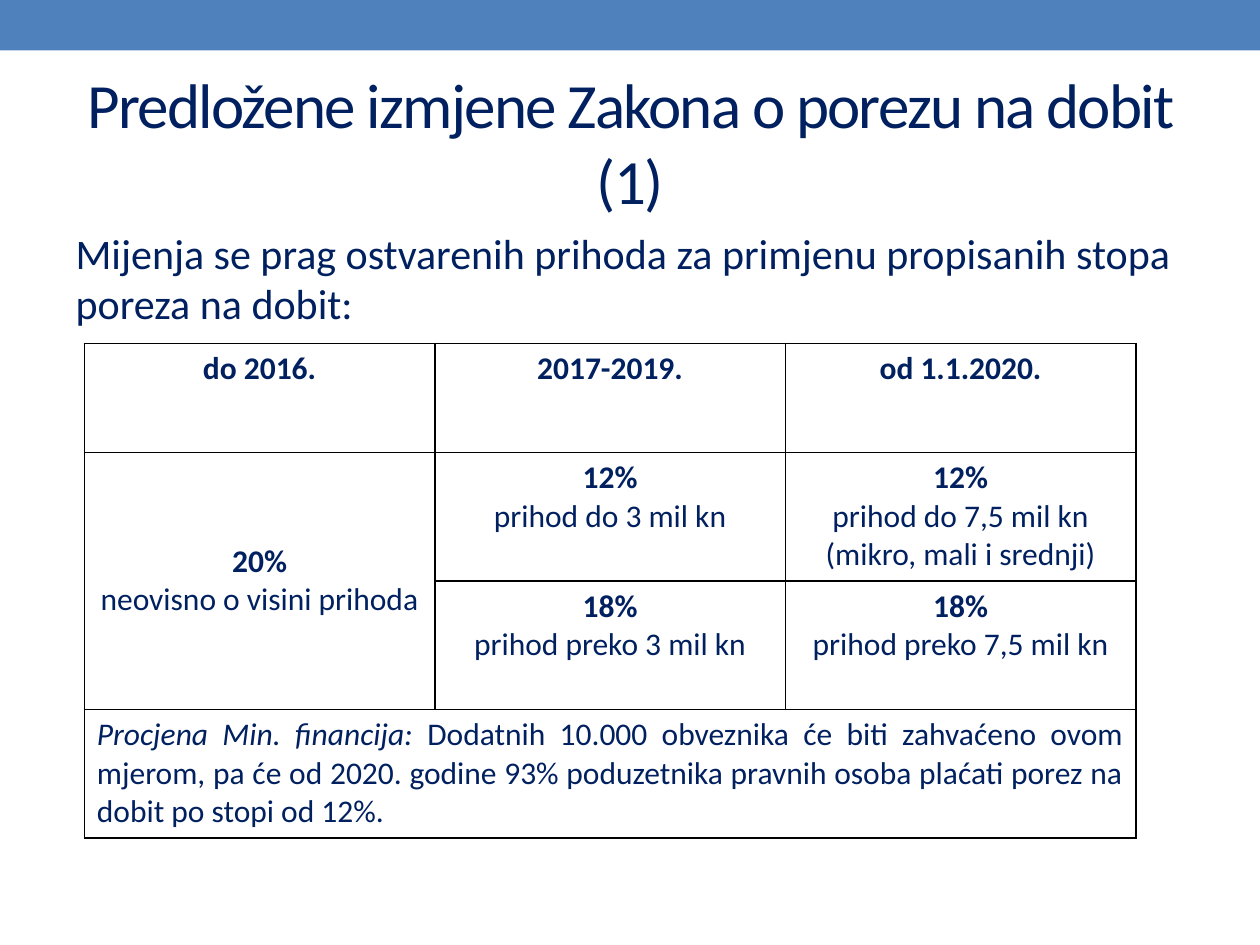
from pptx import Presentation
from pptx.dml.color import RGBColor
from pptx.enum.shapes import MSO_SHAPE
from pptx.enum.text import MSO_ANCHOR, MSO_AUTO_SIZE, PP_ALIGN
from pptx.oxml.ns import qn
from pptx.util import Cm, Pt
from lxml import etree

RECTANGLE = MSO_SHAPE.RECTANGLE
CENTER, LEFT, JUSTIFY = PP_ALIGN.CENTER, PP_ALIGN.LEFT, PP_ALIGN.JUSTIFY
TOP, MIDDLE = MSO_ANCHOR.TOP, MSO_ANCHOR.MIDDLE
FIXED_SIZE = MSO_AUTO_SIZE.NONE
COLORS = {"bar": "4F81BD", "text": "002060", "border": "000000"}
FONT = "Calibri"
TABLE_SIZE = 18
ROW_HEIGHTS = (2.2, 2.59, 2.59, 2.59)
HEADINGS = ("do 2016.", "2017-2019.", "od 1.1.2020.")
RATES = {
    (1, 0): ("20%", "neovisno o visini prihoda"),
    (1, 1): ("12%", "prihod do 3 mil kn"),
    (1, 2): ("12%", "prihod do 7,5 mil kn", "(mikro, mali i srednji)"),
    (2, 1): ("18%", "prihod preko 3 mil kn"),
    (2, 2): ("18%", "prihod preko 7,5 mil kn"),
}
ESTIMATE = (
    "Procjena Min. financija: ",
    "Dodatnih 10.000 obveznika će biti zahvaćeno ovom mjerom, pa će od 2020. "
    "godine 93% poduzetnika pravnih osoba plaćati porez na dobit po stopi od 12%.",
)


def add_span(para, text, size, bold=False, italic=False):
    """Add one formatted run to a paragraph and return it."""
    span = para.add_run()
    span.text = text
    span.font.name = FONT
    span.font.size = Pt(size)
    span.font.bold = bold
    span.font.italic = italic
    span.font.color.rgb = RGBColor.from_string(COLORS["text"])
    return span


def place(shape, left, top, width, height):
    """Move a shape to a box given in centimetres."""
    shape.left, shape.top = Cm(left), Cm(top)
    shape.width, shape.height = Cm(width), Cm(height)


def add_bar(page, left, top, width, height):
    """Draw the coloured band behind the other parts of the page."""
    bar = page.shapes.add_shape(RECTANGLE, Cm(left), Cm(top), Cm(width), Cm(height))
    bar.shadow.inherit = False
    bar.fill.solid()
    bar.fill.fore_color.rgb = RGBColor.from_string(COLORS["bar"])
    bar.line.fill.background()
    bar._element.getparent().insert(2, bar._element)


def fill_title(title, left, top, width, height):
    """Place the title and tighten its letter spacing."""
    place(title, left, top, width, height)
    frame = title.text_frame
    frame.auto_size = FIXED_SIZE
    frame.vertical_anchor = MIDDLE
    para = frame.paragraphs[0]
    para.alignment = CENTER
    span = add_span(para, "Predložene izmjene Zakona o porezu na dobit (1)", 36)
    span.font._element.set("spc", "-100")


def fill_body(body, left, top, width, height):
    """Place the introductory sentence without a bullet."""
    place(body, left, top, width, height)
    frame = body.text_frame
    frame.auto_size = FIXED_SIZE
    frame.vertical_anchor = TOP
    para = frame.paragraphs[0]
    properties = para._p.get_or_add_pPr()
    properties.set("marL", "0")
    properties.set("indent", "0")
    etree.SubElement(properties, qn("a:buNone"))
    para.alignment = LEFT
    para.space_before = Pt(0)
    add_span(para, "Mijenja se prag ostvarenih prihoda za primjenu "
                   "propisanih stopa poreza na dobit:", 24)


def style_cell(cell):
    """Clear a cell's fill and give it thin borders on all sides."""
    properties = cell._tc.get_or_add_tcPr()
    for side in ("a:lnL", "a:lnR", "a:lnT", "a:lnB"):
        line = etree.SubElement(properties, qn(side), w=str(Pt(1)))
        fill = etree.SubElement(line, qn("a:solidFill"))
        etree.SubElement(fill, qn("a:srgbClr"), val=COLORS["border"])
    cell.fill.background()


def fill_cell(cell, lines):
    """Write centred lines into a cell, the first one in bold."""
    for index, text in enumerate(lines):
        para = cell.text_frame.add_paragraph() if index else cell.text_frame.paragraphs[0]
        para.alignment = CENTER
        add_span(para, text, TABLE_SIZE, bold=index == 0)


def add_rate_table(page, left, top, width):
    """Build the table of tax rates by period with the estimate below."""
    frame = page.shapes.add_table(len(ROW_HEIGHTS), len(HEADINGS), Cm(left), Cm(top),
                                  Cm(width), Cm(sum(ROW_HEIGHTS)))
    table = frame.table
    table.first_row = table.horz_banding = False
    for column in table.columns:
        column.width = Cm(width / len(HEADINGS))
    for row, height in zip(table.rows, ROW_HEIGHTS):
        row.height = Cm(height)
        for cell in row.cells:
            style_cell(cell)

    rate, estimate = table.cell(1, 0), table.cell(3, 0)
    rate.merge(table.cell(2, 0))
    estimate.merge(table.cell(3, 2))
    rate.vertical_anchor = estimate.vertical_anchor = MIDDLE
    for column, heading in enumerate(HEADINGS):
        fill_cell(table.cell(0, column), (heading,))
    for (row, column), lines in RATES.items():
        fill_cell(table.cell(row, column), lines)

    para = estimate.text_frame.paragraphs[0]
    para.alignment = JUSTIFY
    source, sentence = ESTIMATE
    add_span(para, source, TABLE_SIZE, italic=True)
    add_span(para, sentence, TABLE_SIZE)


def main():
    """Build the slide and save the deck."""
    deck = Presentation()
    deck.slide_width, deck.slide_height = Cm(25.4), Cm(19.05)
    page = deck.slides.add_slide(deck.slide_layouts[1])
    add_bar(page, 0, 0, 25.4, 1.02)
    fill_title(page.shapes.title, 1.27, 1.47, 22.86, 2.75)
    fill_body(page.placeholders[1], 1.27, 4.45, 22.86, 13.55)
    add_rate_table(page, 1.7, 6.92, 21.2)
    deck.save("out.pptx")


if __name__ == "__main__":
    main()
